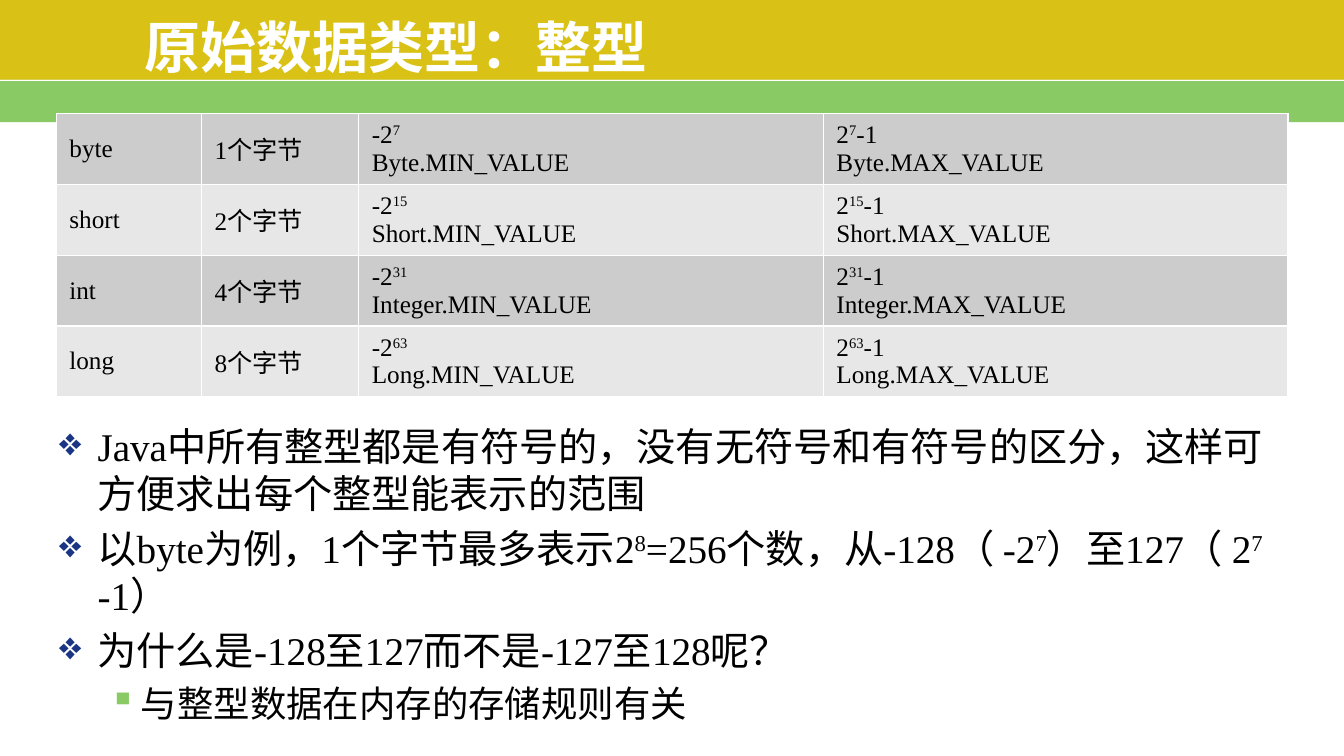
"""Build the slide on Java's primitive integer types."""
import dataclasses

import lxml.etree
import pptx
import pptx.dml.color
import pptx.enum.shapes
import pptx.enum.text
import pptx.oxml.ns
import pptx.util
from pptx.util import Cm


@dataclasses.dataclass(frozen=True)
class Theme:
    gold: str = "D9C215"
    green: str = "89CA64"
    navy: str = "193583"
    white: str = "FFFFFF"
    black: str = "000000"
    row_fills: tuple = ("CCCCCC", "E7E7E7")
    heading_font: str = "Noto Sans CJK SC"
    text_font: str = "Times New Roman"
    title_size: int = 40
    body_sizes: tuple = (28, 26)
    table_size: int = 18


theme = Theme()
rgb = pptx.dml.color.RGBColor.from_string
qn = pptx.oxml.ns.qn


def add_runs(paragraph, text, size, font_name, color, bold=False):
    """Add text run by run; parts between carets are superscript."""
    for index, part in enumerate(text.split("^")):
        if not part:
            continue
        run = paragraph.add_run()
        run.text = part
        run.font.size = pptx.util.Pt(size)
        run.font.name = font_name
        run.font.bold = bold
        run.font.color.rgb = rgb(color)
        properties = run._r.get_or_add_rPr()
        east_asian = lxml.etree.SubElement(properties, qn("a:ea"))
        east_asian.set("typeface", theme.heading_font)
        if index % 2:
            properties.set("baseline", "30000")


def add_color(parent, color):
    """Append a solid colour fill to an XML element."""
    fill = lxml.etree.SubElement(parent, qn("a:solidFill"))
    lxml.etree.SubElement(fill, qn("a:srgbClr")).set("val", color)


presentation = pptx.Presentation()
presentation.slide_width = Cm(33.87)
presentation.slide_height = Cm(19.05)
slide = presentation.slides.add_slide(presentation.slide_layouts[6])

for top, height, color in ((2.01, 1.07, theme.green), (0, 2.01, theme.gold)):
    band = slide.shapes.add_shape(
        pptx.enum.shapes.MSO_SHAPE.RECTANGLE, 0, Cm(top), presentation.slide_width, Cm(height))
    band.shadow.inherit = False
    band.fill.solid()
    band.fill.fore_color.rgb = rgb(color)
    band.line.fill.background()

divider = slide.shapes.add_connector(
    pptx.enum.shapes.MSO_CONNECTOR.STRAIGHT, 0, Cm(2.03), presentation.slide_width, Cm(2.03))
divider.line.color.rgb = rgb(theme.white)
divider.line.width = pptx.util.Pt(1)
lxml.etree.SubElement(divider._element.spPr, qn("a:effectLst"))

title = slide.shapes.add_textbox(Cm(3.39), Cm(0.48), Cm(26.25), Cm(1.35)).text_frame
title.word_wrap = True
title.vertical_anchor = pptx.enum.text.MSO_ANCHOR.MIDDLE
add_runs(title.paragraphs[0], "原始数据类型：整型", theme.title_size,
         theme.heading_font, theme.white, bold=True)

points = (
    (0, "Java中所有整型都是有符号的，没有无符号和有符号的区分，这样可方便求出每个整型能表示的范围"),
    (0, "以byte为例，1个字节最多表示2^8^=256个数，从-128（ -2^7^）至127（ 2^7 ^-1）"),
    (0, "为什么是-128至127而不是-127至128呢？"),
    (1, "与整型数据在内存的存储规则有关"),
)
bullets = (("❖", theme.navy, 0.97, -0.97), ("▪", theme.green, 2.06, -0.79))
body = slide.shapes.add_textbox(Cm(1.24), Cm(10.52), Cm(31.6), Cm(8.33)).text_frame
body.word_wrap = True
for index, (level, text) in enumerate(points):
    paragraph = body.add_paragraph() if index else body.paragraphs[0]
    symbol, color, margin, indent = bullets[level]
    size = theme.body_sizes[level]
    properties = paragraph._p.get_or_add_pPr()
    properties.set("marL", str(Cm(margin)))
    properties.set("indent", str(Cm(indent)))
    bullet_color = lxml.etree.SubElement(properties, qn("a:buClr"))
    lxml.etree.SubElement(bullet_color, qn("a:srgbClr")).set("val", color)
    lxml.etree.SubElement(properties, qn("a:buChar")).set("char", symbol)
    paragraph.level = level
    if index:
        paragraph.space_before = pptx.util.Pt(size * 0.2)
    add_runs(paragraph, text, size, theme.text_font, theme.black)

integer_types = (
    ("byte", 1, "Byte"),
    ("short", 2, "Short"),
    ("int", 4, "Integer"),
    ("long", 8, "Long"),
)
column_widths = (3.66, 3.96, 11.71, 11.71)
row_height = 1.66
table = slide.shapes.add_table(
    len(integer_types), len(column_widths), Cm(1.42), Cm(2.86),
    Cm(sum(column_widths)), Cm(row_height * len(integer_types))).table
table.first_row = False
table.horz_banding = False
for column, width in zip(table.columns, column_widths):
    column.width = Cm(width)
for row_index, (keyword, size, wrapper) in enumerate(integer_types):
    table.rows[row_index].height = Cm(row_height)
    power = f"2^{size * 8 - 1}^"
    row_texts = (
        (keyword,),
        (f"{size}个字节",),
        (f"-{power}", f"{wrapper}.MIN_VALUE"),
        (f"{power}-1", f"{wrapper}.MAX_VALUE"),
    )
    for column_index, lines in enumerate(row_texts):
        cell = table.cell(row_index, column_index)
        cell.vertical_anchor = pptx.enum.text.MSO_ANCHOR.MIDDLE
        cell.margin_left = cell.margin_right = Cm(0.33)
        cell.margin_top = cell.margin_bottom = Cm(0.13)
        properties = cell._tc.get_or_add_tcPr()
        for side in ("a:lnL", "a:lnR", "a:lnT", "a:lnB"):
            border = lxml.etree.SubElement(properties, qn(side))
            border.set("w", str(pptx.util.Pt(1)))
            add_color(border, theme.white)
        cell.fill.solid()
        cell.fill.fore_color.rgb = rgb(theme.row_fills[row_index % 2])
        for line_index, line in enumerate(lines):
            frame = cell.text_frame
            paragraph = frame.add_paragraph() if line_index else frame.paragraphs[0]
            add_runs(paragraph, line, theme.table_size, theme.text_font, theme.black)

presentation.save("out.pptx")
